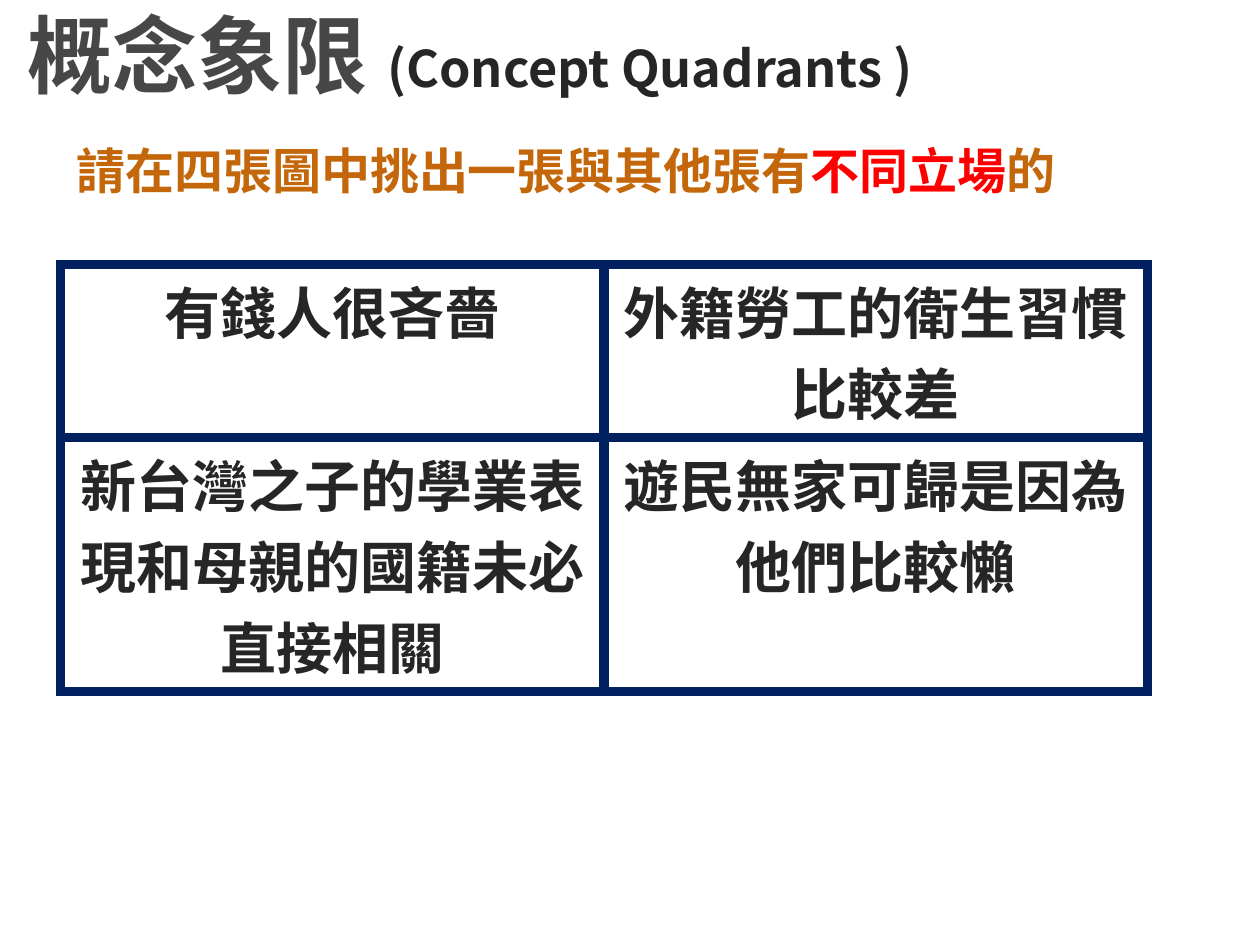
from dataclasses import dataclass

from lxml import etree
from pptx import Presentation
from pptx.dml.color import RGBColor
from pptx.enum.text import MSO_ANCHOR, MSO_AUTO_SIZE, PP_ALIGN
from pptx.oxml.ns import qn
from pptx.util import Pt

LEFT, CENTER = PP_ALIGN.LEFT, PP_ALIGN.CENTER
MIDDLE = MSO_ANCHOR.MIDDLE
NO_FIT, GROW = MSO_AUTO_SIZE.NONE, MSO_AUTO_SIZE.SHAPE_TO_FIT_TEXT
FONT = "Noto Sans CJK SC"
GREY, DARK, NAVY = "474747", "262626", "002060"
ORANGE, RED, WHITE = "C4670A", "FF0000", "FFFFFF"
COL_W = 310.6
ROW_HEIGHTS = (91.4, 135.4)


@dataclass
class Span:
    text: str
    size: float
    color: str


TITLE = [Span("概念象限 ", 48.6, GREY), Span("(Concept Quadrants )", 28.8, DARK)]
PROMPT = [
    Span("請在四張圖中挑出一張與其他張有", 28, ORANGE),
    Span("不同立場", 28, RED),
    Span("的", 28, ORANGE),
]
QUADRANTS = [
    ["有錢人很吝嗇", "外籍勞工的衛生習慣比較差"],
    ["新台灣之子的學業表現和母親的國籍未必直接相關", "遊民無家可歸是因為他們比較懶"],
]


def rgb(color: str) -> RGBColor:
    return RGBColor.from_string(color)


def write(p, spans: list[Span], align=LEFT) -> None:
    p.alignment = align
    for span in spans:
        r = p.add_run()
        r.text = span.text
        r.font.size = Pt(span.size)
        r.font.bold = True
        r.font.color.rgb = rgb(span.color)
        r.font.name = FONT
        ea = etree.Element(qn("a:ea"), typeface=FONT)
        r.font._element.find(qn("a:latin")).addnext(ea)


def set_borders(cell, color: str, width: float) -> None:
    tc_pr = cell._tc.get_or_add_tcPr()
    for i, side in enumerate(("lnL", "lnR", "lnT", "lnB")):
        ln = etree.Element(qn(f"a:{side}"), w=str(Pt(width)))
        fill = etree.SubElement(ln, qn("a:solidFill"))
        etree.SubElement(fill, qn("a:srgbClr"), val=color)
        tc_pr.insert(i, ln)


def fill_cell(cell, color: str, opacity: int) -> None:
    cell.fill.solid()
    cell.fill.fore_color.rgb = rgb(color)
    clr = cell._tc.tcPr.find(".//" + qn("a:srgbClr"))
    etree.SubElement(clr, qn("a:alpha"), val=str(opacity * 1000))


def add_quadrants(slide) -> None:
    table = slide.shapes.add_table(
        2, 2, Pt(34.6), Pt(151.2), Pt(2 * COL_W), Pt(sum(ROW_HEIGHTS))
    ).table
    table.first_row = table.horz_banding = False
    for col in table.columns:
        col.width = Pt(COL_W)
    for row, height, texts in zip(table.rows, ROW_HEIGHTS, QUADRANTS):
        row.height = Pt(height)
        for cell, text in zip(row.cells, texts):
            cell.margin_left = cell.margin_right = Pt(5)
            cell.margin_top = cell.margin_bottom = Pt(2.9)
            fill_cell(cell, WHITE, 48)
            set_borders(cell, NAVY, 6)
            write(cell.text_frame.paragraphs[0], [Span(text, 32, DARK)], CENTER)


def main() -> None:
    prs = Presentation()
    prs.slide_width, prs.slide_height = Pt(720), Pt(540)
    slide = prs.slides.add_slide(prs.slide_layouts[5])

    title = slide.shapes.title
    title.left, title.top, title.width, title.height = Pt(8.6), Pt(3.6), Pt(661.7), Pt(54)
    title.text_frame.vertical_anchor = MIDDLE
    title.text_frame.auto_size = NO_FIT
    write(title.text_frame.paragraphs[0], TITLE)

    add_quadrants(slide)

    prompt = slide.shapes.add_textbox(Pt(36.7), Pt(77), Pt(580.3), Pt(41))
    prompt.text_frame.word_wrap = False
    prompt.text_frame.auto_size = GROW
    write(prompt.text_frame.paragraphs[0], PROMPT)

    prs.save("out.pptx")


if __name__ == "__main__":
    main()
